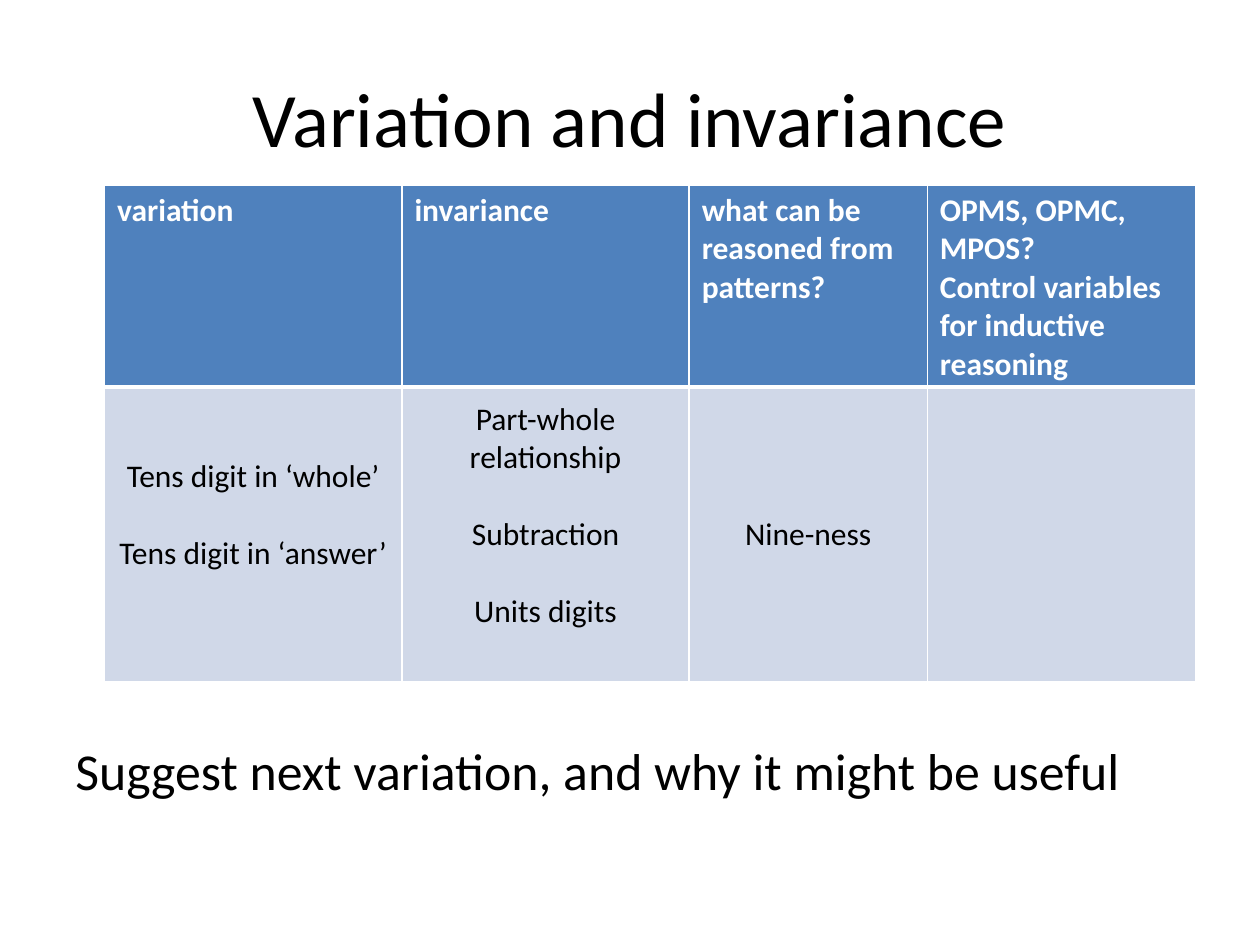
from dataclasses import dataclass

from lxml.etree import SubElement
from pptx import Presentation
from pptx.dml.color import RGBColor
from pptx.enum.text import MSO_ANCHOR, PP_ALIGN
from pptx.oxml.ns import qn
from pptx.util import Inches, Pt

WHITE = RGBColor(0xFF, 0xFF, 0xFF)
BLACK = RGBColor(0x00, 0x00, 0x00)
HEADER_BLUE = RGBColor(0x4F, 0x81, 0xBD)
BODY_BLUE = RGBColor(0xD0, 0xD8, 0xE8)
FONT = "Calibri"
LINE_GAP = Pt(22)


@dataclass(frozen=True)
class Caption:
    text: str
    left: float
    top: float
    width: float
    height: float
    size: float
    align: PP_ALIGN


@dataclass(frozen=True)
class RowStyle:
    height: float
    fill: RGBColor
    color: RGBColor
    bold: bool
    align: PP_ALIGN
    anchor: MSO_ANCHOR
    gap: Pt
    bottom_line: float


@dataclass(frozen=True)
class Column:
    width: float
    heading: str
    findings: str
    bottom_margin: float = 0.05


CAPTIONS = [
    Caption("Variation and invariance", 0.5, 0.3, 9, 1.25, 44, PP_ALIGN.CENTER),
    Caption("Suggest next variation, and why it might be useful",
            0.5, 5.81, 9, 0.6, 29.6, PP_ALIGN.LEFT),
]
HEADER = RowStyle(1.6, HEADER_BLUE, WHITE, True, PP_ALIGN.LEFT,
                  MSO_ANCHOR.TOP, Pt(0), 3)
BODY = RowStyle(2.34, BODY_BLUE, BLACK, False, PP_ALIGN.CENTER,
                MSO_ANCHOR.MIDDLE, LINE_GAP, 1)
COLUMNS = [
    Column(2.36, "variation",
           "Tens digit in ‘whole’\nTens digit in ‘answer’", 0.35),
    Column(2.28, "invariance",
           "Part-whole relationship\nSubtraction\nUnits digits", 0.35),
    Column(1.89, "what can be reasoned from patterns?", "Nine-ness"),
    Column(2.13, "OPMS, OPMC, MPOS?\nControl variables for inductive reasoning", ""),
]


def style_text(frame, size: float, color: RGBColor, align: PP_ALIGN,
               bold: bool = False, gap: Pt = Pt(0)) -> None:
    for index, paragraph in enumerate(frame.paragraphs):
        paragraph.alignment = align
        paragraph.space_before = gap if index else Pt(0)
        font = paragraph.font
        font.size = Pt(size)
        for run in paragraph.runs:
            run.font.name = FONT
            run.font.size = Pt(size)
            run.font.bold = bold
            run.font.color.rgb = color


def add_caption(slide, caption: Caption) -> None:
    frame = slide.shapes.add_textbox(
        Inches(caption.left), Inches(caption.top),
        Inches(caption.width), Inches(caption.height)).text_frame
    frame.word_wrap = True
    frame.vertical_anchor = MSO_ANCHOR.MIDDLE
    frame.text = caption.text
    style_text(frame, caption.size, BLACK, caption.align)


def add_borders(cell, top: float, bottom: float) -> None:
    properties = cell._tc.get_or_add_tcPr()
    edges = {"a:lnL": 1, "a:lnR": 1, "a:lnT": top, "a:lnB": bottom}
    for position, (edge, points) in enumerate(edges.items()):
        line = SubElement(properties, qn(edge), w=str(Pt(points)))
        fill = SubElement(line, qn("a:solidFill"))
        SubElement(fill, qn("a:srgbClr"), val=str(WHITE))
        properties.insert(position, line)


def fill_cell(cell, text: str, style: RowStyle, top_line: float,
              bottom_margin: float) -> None:
    cell.fill.solid()
    cell.fill.fore_color.rgb = style.fill
    cell.vertical_anchor = style.anchor
    cell.margin_bottom = Inches(bottom_margin)
    cell.text_frame.text = text
    style_text(cell.text_frame, 18, style.color, style.align, style.bold, style.gap)
    add_borders(cell, top_line, style.bottom_line)


def add_variation_table(slide) -> None:
    width = sum(column.width for column in COLUMNS)
    table = slide.shapes.add_table(
        2, len(COLUMNS), Inches(0.83), Inches(1.47),
        Inches(width), Inches(HEADER.height + BODY.height)).table
    for row, style in zip(table.rows, (HEADER, BODY)):
        row.height = Inches(style.height)
    for index, column in enumerate(COLUMNS):
        table.columns[index].width = Inches(column.width)
        fill_cell(table.cell(0, index), column.heading, HEADER, 1, 0.05)
        fill_cell(table.cell(1, index), column.findings, BODY,
                  HEADER.bottom_line, column.bottom_margin)


def main() -> None:
    presentation = Presentation()
    presentation.slide_width = Inches(10)
    presentation.slide_height = Inches(7.5)
    slide = presentation.slides.add_slide(presentation.slide_layouts[6])
    for caption in CAPTIONS:
        add_caption(slide, caption)
    add_variation_table(slide)
    presentation.save("out.pptx")


if __name__ == "__main__":
    main()
